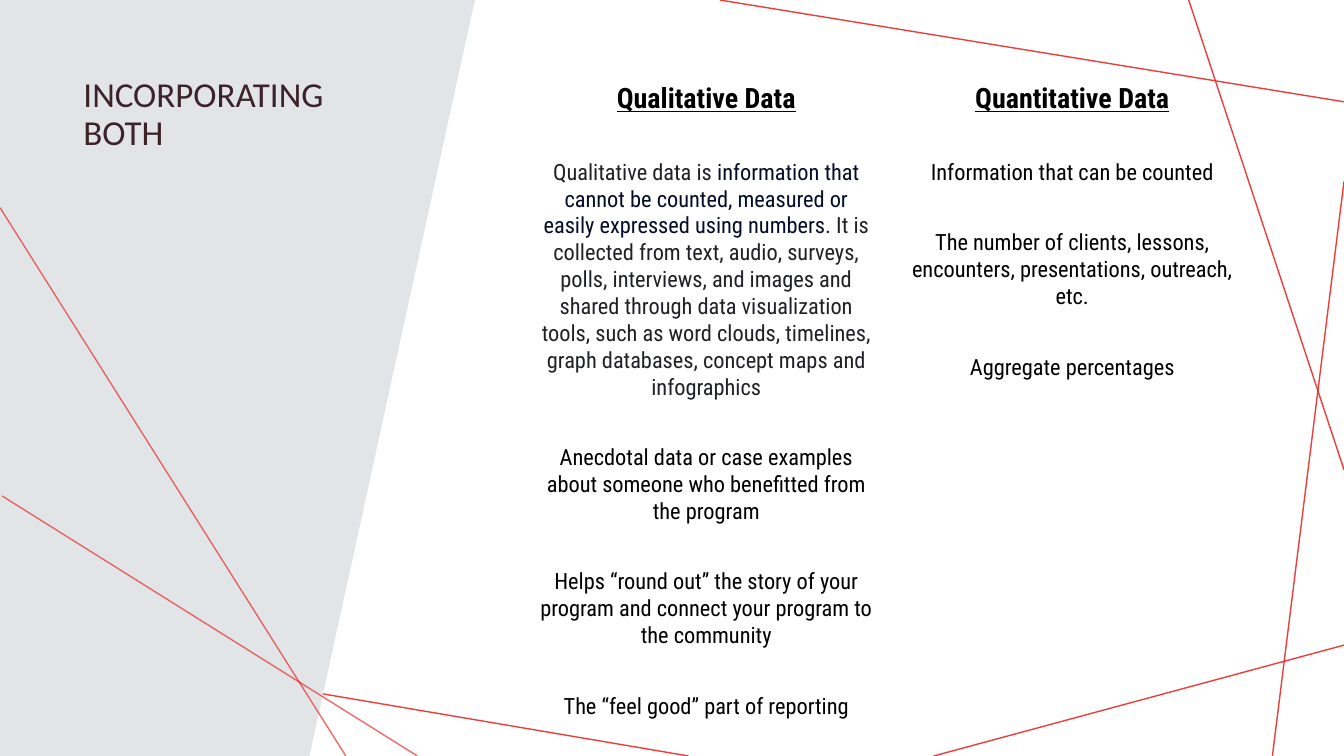
"""Build the slide comparing qualitative and quantitative data."""
from dataclasses import dataclass

from lxml import etree
from pptx import Presentation
from pptx import util as u
from pptx.dml.color import RGBColor
from pptx.enum import shapes, text
from pptx.oxml.ns import qn


@dataclass(frozen=True)
class Theme:
    """Colours, fonts and type sizes."""
    accent: str = "E72D29"
    panel: str = "E2E5E8"
    title: str = "3D2229"
    ink: str = "000000"
    quote: str = "202124"
    strong: str = "040C28"
    title_font: str = "Calibri"
    body_font: str = "Roboto Condensed"
    title_size: float = 25
    heading_size: float = 20
    body_size: float = 16
    gap: float = 31.2


def add_run(p, content, font, size, color, bold=False, underline=False):
    """Append a formatted run to a paragraph."""
    r = p.add_run()
    r.text = content
    r.font.name = font
    r.font.size = u.Pt(size)
    r.font.bold = bold
    r.font.underline = underline
    r.font.color.rgb = RGBColor.from_string(color)


class Deck:
    """Holds the theme and the current slide."""

    def __init__(self, prs, theme):
        """Add a blank slide."""
        self.theme = theme
        self.slide = prs.slides.add_slide(prs.slide_layouts[6])

    def line(self, x1, y1, x2, y2, opacity):
        """Draw a translucent accent line."""
        sp = self.slide.shapes.add_connector(
            shapes.MSO_CONNECTOR.STRAIGHT, *map(u.Inches, (x1, y1, x2, y2)))
        sp.line.width = u.Pt(1)
        sp.line.color.rgb = RGBColor.from_string(self.theme.accent)
        props = sp.element.spPr
        color = next(props.iter(qn("a:srgbClr")))
        etree.SubElement(color, qn("a:alpha"), val=str(opacity * 1000))
        etree.SubElement(props, qn("a:effectLst"))

    def panel(self, points):
        """Draw a filled polygon."""
        start, *rest = [(u.Inches(x), u.Inches(y)) for x, y in points]
        builder = self.slide.shapes.build_freeform(*start)
        builder.add_line_segments(rest, close=True)
        sp = builder.convert_to_shape()
        sp.shadow.inherit = False
        sp.fill.solid()
        sp.fill.fore_color.rgb = RGBColor.from_string(self.theme.panel)
        sp.line.fill.background()

    def box(self, left, top, width, height):
        """Add a wrapping text box and return its text frame."""
        sp = self.slide.shapes.add_textbox(*map(u.Inches, (left, top, width, height)))
        tf = sp.text_frame
        tf.word_wrap = True
        tf.vertical_anchor = text.MSO_ANCHOR.TOP
        return tf

    def title(self, content, *frame):
        """Add the slide title."""
        t = self.theme
        p = self.box(*frame).paragraphs[0]
        p.line_spacing = 0.9
        add_run(p, content, t.title_font, t.title_size, t.title)

    def column(self, heading, items, *frame):
        """Add a centred heading with paragraphs of (text, colour) runs."""
        t = self.theme
        tf = self.box(*frame)
        p = tf.paragraphs[0]
        add_run(p, heading, t.body_font, t.heading_size, t.ink, bold=True, underline=True)
        for item in items:
            p = tf.add_paragraph()
            for content, color in item:
                add_run(p, content, t.body_font, t.body_size, color)
        for p in tf.paragraphs:
            p.alignment = text.PP_ALIGN.CENTER
            p.space_after = u.Pt(t.gap)
        p.space_after = u.Pt(0)


BACK_LINES = [
    (6.83, 7.5, 0, 6.34),
    (13.33, 6.4, 9.26, 7.5),
    (13.33, 1.8, 12.62, 7.5),
    (13.33, 4.66, 11.79, 0),
    (13.33, 1.01, 7.14, 0),
]
FRONT_LINES = [(4.14, 7.5, 0.02, 4.92), (0, 2.06, 3.43, 7.5)]


def main():
    """Compose and save the slide."""
    prs = Presentation()
    prs.slide_width, prs.slide_height = u.Inches(13.33), u.Inches(7.5)
    t = Theme()
    deck = Deck(prs, t)
    for ends in BACK_LINES:
        deck.line(*ends, opacity=91)
    deck.panel([(3.07, 7.5), (0, 7.5), (0, 0), (4.71, 0)])
    deck.title("INCORPORATING BOTH", 0.73, 0.72, 3.24, 3.19)
    for ends in FRONT_LINES:
        deck.line(*ends, opacity=70)
    deck.column("Qualitative Data", [
        [("Qualitative data is ", t.quote),
         ("information that cannot be counted, measured or easily expressed "
          "using numbers", t.strong),
         (". It is collected from text, audio, surveys, polls, interviews, and "
          "images and shared through data visualization tools, such as word "
          "clouds, timelines, graph databases, concept maps and infographics", t.quote)],
        [("Anecdotal data or case examples about someone who benefitted from "
          "the program", t.ink)],
        [("Helps “round out” the story of your program and connect your program "
          "to the community", t.ink)],
        [("The “feel good” part of reporting", t.ink)],
    ], 5.24, 0.75, 3.53, 6.23)
    deck.column("Quantitative Data", [
        [("Information that can be counted", t.ink)],
        [("The number of clients, lessons, encounters, presentations, outreach, "
          "etc.", t.ink)],
        [("Aggregate percentages", t.ink)],
    ], 8.87, 0.75, 3.53, 6.08)
    prs.save("out.pptx")


if __name__ == "__main__":
    main()
